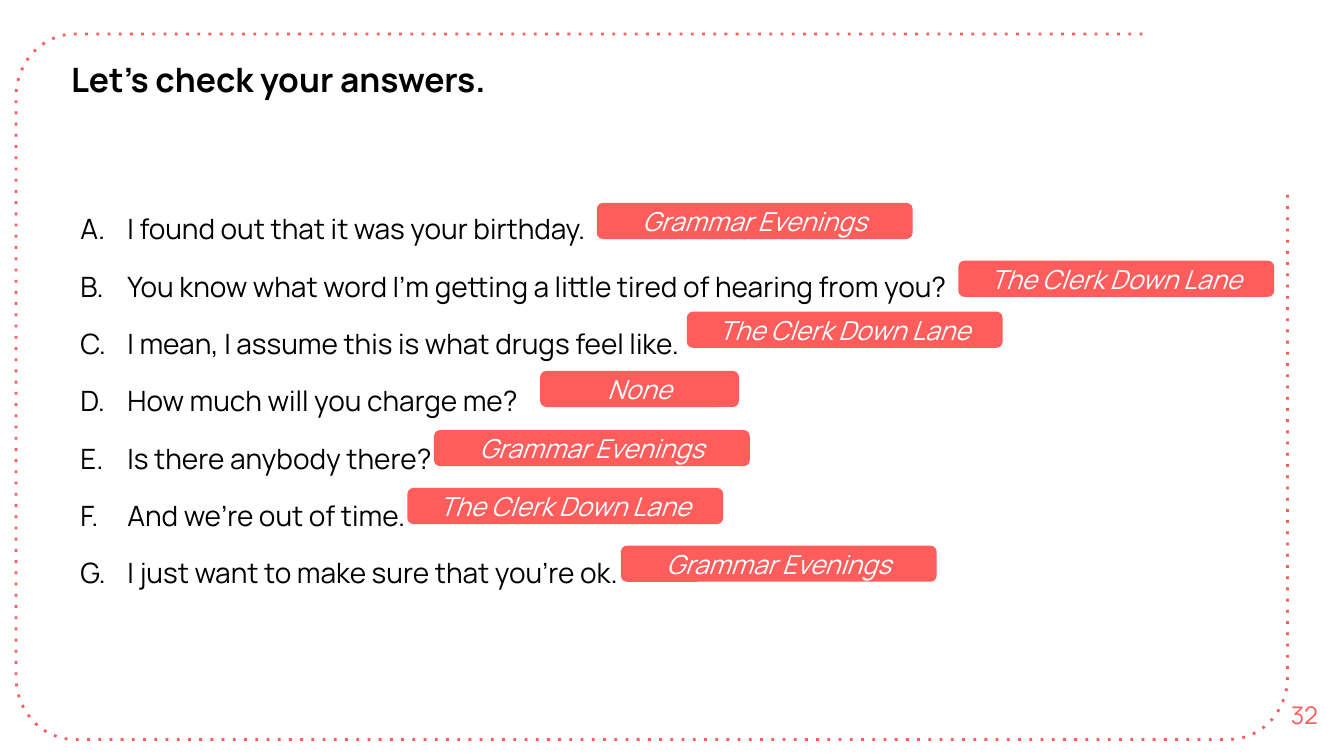
from dataclasses import dataclass
from math import cos, radians, sin

from lxml.etree import SubElement
from pptx import Presentation
from pptx.dml.color import RGBColor
from pptx.enum.dml import MSO_LINE
from pptx.enum.shapes import MSO_SHAPE
from pptx.enum.text import MSO_ANCHOR, MSO_AUTO_SIZE, PP_ALIGN
from pptx.oxml.ns import qn
from pptx.shapes.autoshape import Shape
from pptx.slide import Slide
from pptx.util import Pt

COLORS = {"coral": "FF5C5C", "ink": "000000", "white": "FFFFFF"}
FONT = "Manrope"
INSET = 7.2


@dataclass
class Item:
    quote: str
    answer: str
    left: float
    top: float
    width: float = 169.2


FILM, SERIES = "Grammar Evenings", "The Clerk Down Lane"
ITEMS = [
    Item("I found out that it was your birthday.", FILM, 319.7, 108.7),
    Item("You know what word I’m getting a little tired of hearing from you?",
         SERIES, 513.4, 139.7),
    Item("I mean, I assume this is what drugs feel like.", SERIES, 367.9, 167),
    Item("How much will you charge me?", "None", 289.4, 198.7, 106.5),
    Item("Is there anybody there?", FILM, 232.5, 230.4),
    Item("And we’re out of time.", SERIES, 218.2, 261.4),
    Item("I just want to make sure that you’re ok.", FILM, 332.6, 292.3),
]


def color(name: str) -> RGBColor:
    return RGBColor.from_string(COLORS[name])


def letter(para) -> None:
    """Number the paragraph A., B., C. with a hanging indent."""
    props = para._p.get_or_add_pPr()
    props.set("marL", str(Pt(36)))
    props.set("indent", str(-Pt(25.2)))
    tint = SubElement(props, qn("a:buClr"))
    SubElement(tint, qn("a:srgbClr"), val=COLORS["ink"])
    SubElement(props, qn("a:buFont"), typeface=FONT)
    SubElement(props, qn("a:buAutoNum"), type="alphaUcPeriod")


def write(shape: Shape, *lines: str, size: float, ink: str = "ink",
          bold: bool = False, italic: bool = False, center: bool = False,
          middle: bool = False, grow: bool = False, listed: bool = False) -> None:
    frame = shape.text_frame
    frame.word_wrap = True
    frame.auto_size = MSO_AUTO_SIZE.SHAPE_TO_FIT_TEXT if grow else MSO_AUTO_SIZE.NONE
    frame.vertical_anchor = MSO_ANCHOR.MIDDLE if middle else MSO_ANCHOR.TOP
    frame.margin_left = frame.margin_right = Pt(INSET)
    frame.margin_top = frame.margin_bottom = Pt(INSET)
    for index, line in enumerate(lines):
        para = frame.add_paragraph() if index else frame.paragraphs[0]
        para.alignment = PP_ALIGN.CENTER if center else PP_ALIGN.LEFT
        if listed:
            letter(para)
            para.line_spacing = 1.15
            para.space_before = Pt(10 if index else 0)
        run = para.add_run()
        run.text = line
        font = run.font
        font.name, font.size = FONT, Pt(size)
        font.bold, font.italic = bold, italic
        font.color.rgb = color(ink)


def add_box(slide: Slide, left: float, top: float, width: float, height: float) -> Shape:
    return slide.shapes.add_textbox(Pt(left), Pt(top), Pt(width), Pt(height))


def add_frame(slide: Slide) -> None:
    """Draw the open dotted border with its three round corners."""
    left, top, right, bottom = 8.6, 18.2, 689.8, 396.2
    wide, high = 31.5, 33.5
    corners = [(left + wide, top + high, 270), (left + wide, bottom - high, 180),
               (right - wide, bottom - high, 90)]
    points = [(x + wide * cos(radians(start - step)), y + high * sin(radians(start - step)))
              for x, y, start in corners for step in range(0, 91, 6)]
    points.append((right, 100.8))
    pen = slide.shapes.build_freeform(Pt(612), Pt(top), scale=1.0)
    pen.add_line_segments([(Pt(x), Pt(y)) for x, y in points], close=False)
    border = pen.convert_to_shape()
    border.shadow.inherit = False
    border.fill.background()
    border.line.color.rgb = color("coral")
    border.line.width = Pt(1.5)
    border.line.dash_style = MSO_LINE.ROUND_DOT
    border.line._ln.find(qn("a:prstDash")).set("val", "dot")


def add_tag(slide: Slide, item: Item) -> None:
    tag = slide.shapes.add_shape(MSO_SHAPE.ROUNDED_RECTANGLE, Pt(item.left), Pt(item.top),
                                 Pt(item.width), Pt(19.4))
    tag.adjustments[0] = 0.17
    tag.shadow.inherit = False
    tag.fill.solid()
    tag.fill.fore_color.rgb = color("coral")
    tag.line.fill.background()
    write(tag, item.answer, size=14, ink="white", italic=True, center=True, middle=True)


def main() -> None:
    deck = Presentation()
    deck.slide_width, deck.slide_height = Pt(720), Pt(405)
    slide = deck.slides.add_slide(deck.slide_layouts[6])
    add_frame(slide)
    write(add_box(slide, 677.5, 361.4, 42.5, 43.2), "32",
          size=13, ink="coral", center=True, middle=True)
    write(add_box(slide, 31, 24.5, 571.7, 36), "Let’s check your answers.",
          size=18, bold=True, grow=True)
    write(add_box(slide, 25.2, 103.7, 571.7, 218.9), *[item.quote for item in ITEMS],
          size=15, grow=True, listed=True)
    for item in ITEMS:
        add_tag(slide, item)
    deck.save("out.pptx")


if __name__ == "__main__":
    main()
